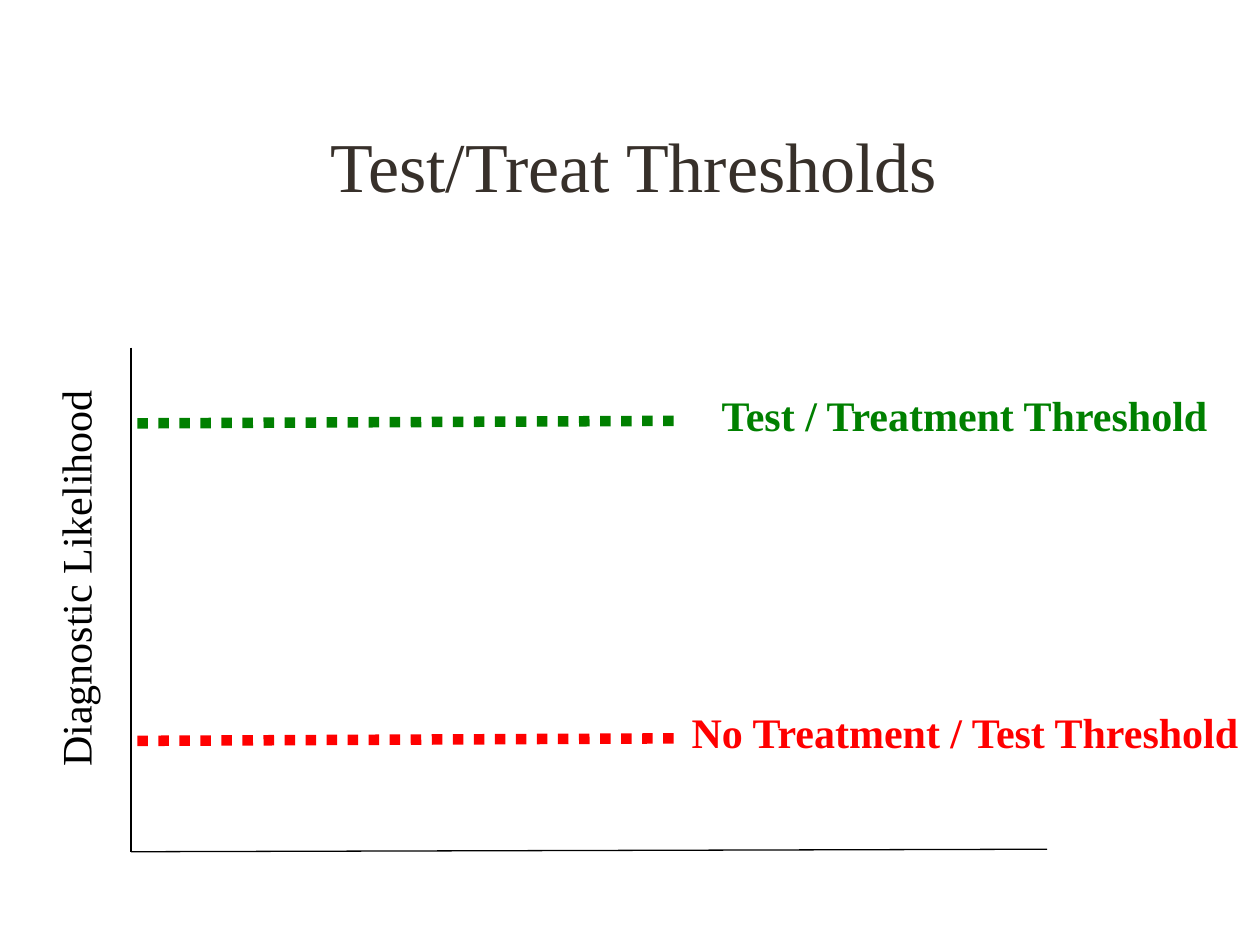
from dataclasses import dataclass

from lxml.etree import SubElement
from pptx import Presentation
from pptx.dml.color import RGBColor as RGB
from pptx.enum.dml import MSO_LINE as Dash
from pptx.enum.shapes import MSO_CONNECTOR as Conn
from pptx.enum.text import MSO_ANCHOR as Anchor, MSO_AUTO_SIZE as Auto, PP_ALIGN as Align
from pptx.oxml.ns import qn
from pptx.util import Inches, Pt


@dataclass(frozen=True)
class Theme:
    font: str = "Times New Roman"
    head: int = 40
    body: int = 24
    title: RGB = RGB(0x37, 0x30, 0x2A)
    ink: RGB = RGB(0, 0, 0)
    treat: RGB = RGB(0, 0x80, 0)
    none: RGB = RGB(0xFF, 0, 0)
    thin: float = 0.75
    thick: float = 6


THEME = Theme()
CELL = Inches(0.1)  # grid of 100 columns by 75 rows
COLS, ROWS = 100, 75
TALL = 5.1  # rows in a one-line label


def grid(*cells):
    return [round(n * CELL) for n in cells]


def style(frame, size, color, bold=False):
    for run in frame.paragraphs[0].runs:
        font = run.font
        font.name, font.size, font.bold = THEME.font, Pt(size), bold
        font.color.rgb = color


def add_line(slide, start, end, color, width, dash=None):
    line = slide.shapes.add_connector(Conn.STRAIGHT, *grid(*start, *end))
    line.line.color.rgb = color
    line.line.width = Pt(width)
    if dash:
        line.line.dash_style = dash
    SubElement(line._element.spPr, qn("a:effectLst"))


def add_label(slide, box, text, color, bold=False, turn=0):
    label = slide.shapes.add_textbox(*grid(*box))
    label.rotation = turn
    frame = label.text_frame
    frame.text = text
    frame.word_wrap = False
    frame.auto_size = Auto.SHAPE_TO_FIT_TEXT
    style(frame, THEME.body, color, bold)


def add_title(slide, box, text):
    title = slide.shapes.title
    title.left, title.top, title.width, title.height = grid(*box)
    frame = title.text_frame
    frame.text = text
    frame.vertical_anchor = Anchor.MIDDLE
    frame.paragraphs[0].alignment = Align.CENTER
    style(frame, THEME.head, THEME.title)


def add_axes(slide, box, text):
    left, top, width, height = box
    base = top + height
    add_line(slide, (left, top), (left, base), THEME.ink, THEME.thin)
    add_line(slide, (left, base), (left + width, base - 0.2), THEME.ink, THEME.thin)
    # The label is centred on a point left of the upright axis
    wide = 32.2
    mid, row = left - 4.4, top + 18.15
    add_label(slide, (mid - wide / 2, row - TALL / 2, wide, TALL), text, THEME.ink, turn=270)


def add_mark(slide, box, inset, text, color):
    """Dotted threshold line with its label to the right."""
    left, top, width, wide = box
    add_line(slide, (left, top), (left + width, top - 0.2), color, THEME.thick, Dash.ROUND_DOT)
    add_label(slide, (left + width + inset, top - 3.2, wide, TALL), text, color, bold=True)


def main():
    deck = Presentation()
    deck.slide_width, deck.slide_height = grid(COLS, ROWS)
    slide = deck.slides.add_slide(deck.slide_layouts[5])

    add_title(slide, (7.8, 6.8, 85, 12.5), "Test/Treat Thresholds")
    left, top, width, height = plot = (10.4, 27.6, 72.7, 40)
    add_axes(slide, plot, "Diagnostic Likelihood")

    # Thresholds: rows below the plot top, label inset and width
    marks = [
        (31.2, 0, 45.7, "No Treatment / Test Threshold", THEME.none),
        (6, 2.4, 41, "Test / Treatment Threshold", THEME.treat),
    ]
    for drop, inset, wide, text, color in marks:
        add_mark(slide, (left + 0.5, top + drop, 43, wide), inset, text, color)

    deck.save("out.pptx")


if __name__ == "__main__":
    main()
